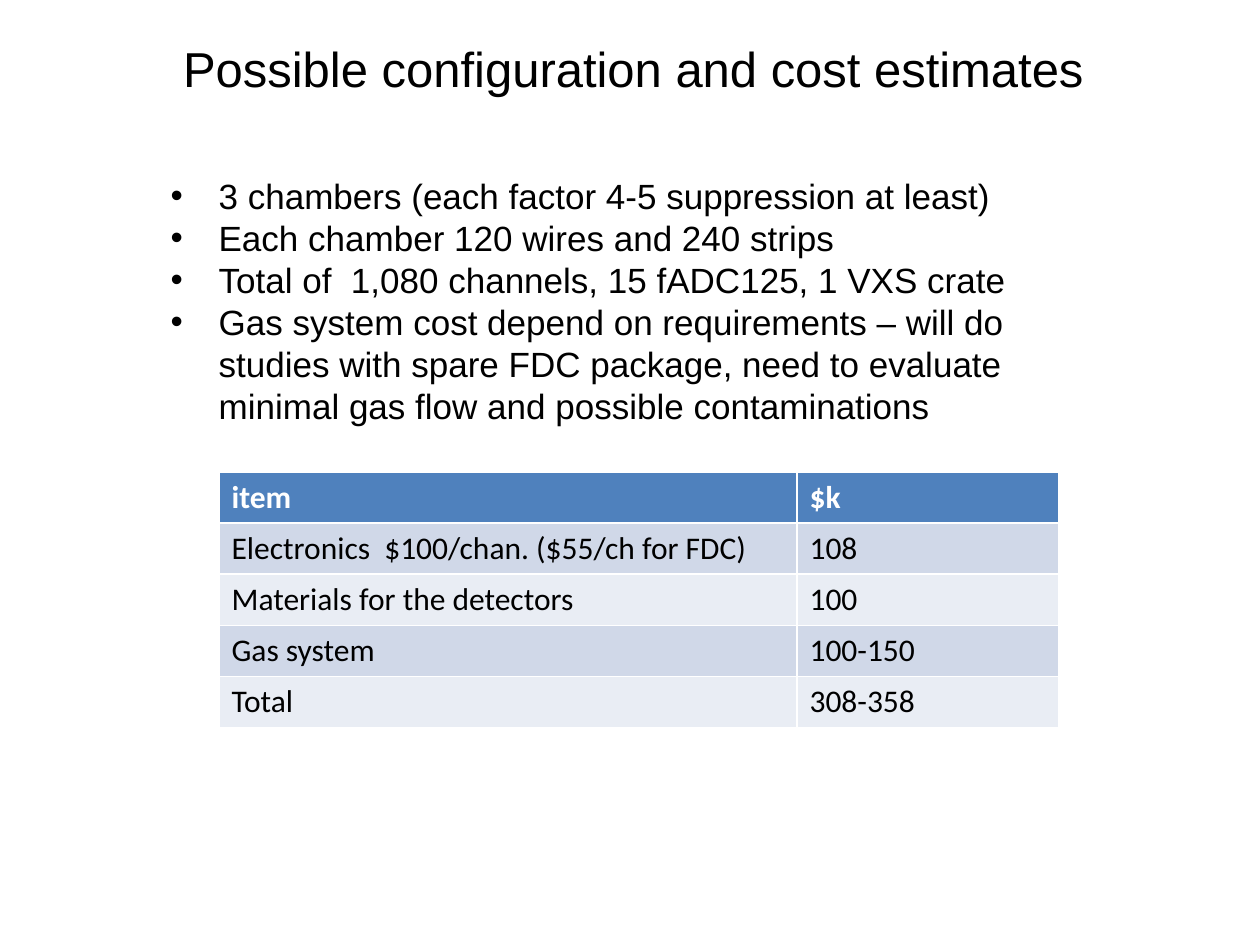
"""Build the chamber configuration and cost estimate slide."""
from pptx import Presentation, util as u
from pptx.dml.color import RGBColor
from pptx.enum import text

PX = 914400 / 126
BLACK = RGBColor(0, 0, 0)
WHITE = RGBColor(255, 255, 255)
BLUE = RGBColor(0x4F, 0x81, 0xBD)
BANDS = [RGBColor(0xE9, 0xED, 0xF4), RGBColor(0xD0, 0xD8, 0xE8)]
POINTS = [
    "3 chambers (each factor 4-5 suppression at least)",
    "Each chamber 120 wires and 240 strips",
    "Total of  1,080 channels, 15 fADC125, 1 VXS crate",
    "Gas system cost depend on requirements – will do studies with spare FDC "
    "package, need to evaluate minimal gas flow and possible contaminations",
]
COSTS = [
    ("item", "$k"),
    ("Electronics  $100/chan. ($55/ch for FDC)", "108"),
    ("Materials for the detectors", "100"),
    ("Gas system", "100-150"),
    ("Total", "308-358"),
]


def px(*sizes):
    return [u.Emu(round(size * PX)) for size in sizes]


def style(font, name, size, color):
    font.name, font.size = name, u.Pt(size)
    font.color.rgb = color


deck = Presentation()
deck.slide_width, deck.slide_height = px(1260, 945)
slide = deck.slides.add_slide(deck.slide_layouts[1])
title, body = slide.placeholders

for shape, box, words, size in [
    (title, (105, 32, 1070, 72), "Possible configuration and cost estimates ", 28),
    (body, (158, 168, 892, 267), "\n".join(POINTS), 20),
]:
    shape.left, shape.top, shape.width, shape.height = px(*box)
    frame = shape.text_frame
    frame.text = words
    frame.auto_size = text.MSO_AUTO_SIZE.NONE
    for para in frame.paragraphs:
        para.space_before = u.Pt(0)
        style(para.font, "Arial", size, BLACK)

indent, = px(48)
for para in body.text_frame.paragraphs:
    props = para._p.get_or_add_pPr()
    props.set("marL", str(indent))
    props.set("indent", str(-indent))

table = slide.shapes.add_table(len(COSTS), 2, *px(219, 472, 840, 255)).table
for col, width in zip(table.columns, px(578, 262)):
    col.width = width
for r, row in enumerate(COSTS):
    for c, words in enumerate(row):
        cell = table.cell(r, c)
        cell.text = words
        cell.fill.solid()
        cell.fill.fore_color.rgb = BANDS[r % 2] if r else BLUE
        font = cell.text_frame.paragraphs[0].font
        style(font, "Calibri", 18, BLACK if r else WHITE)
        font.bold = r == 0

deck.save("out.pptx")
